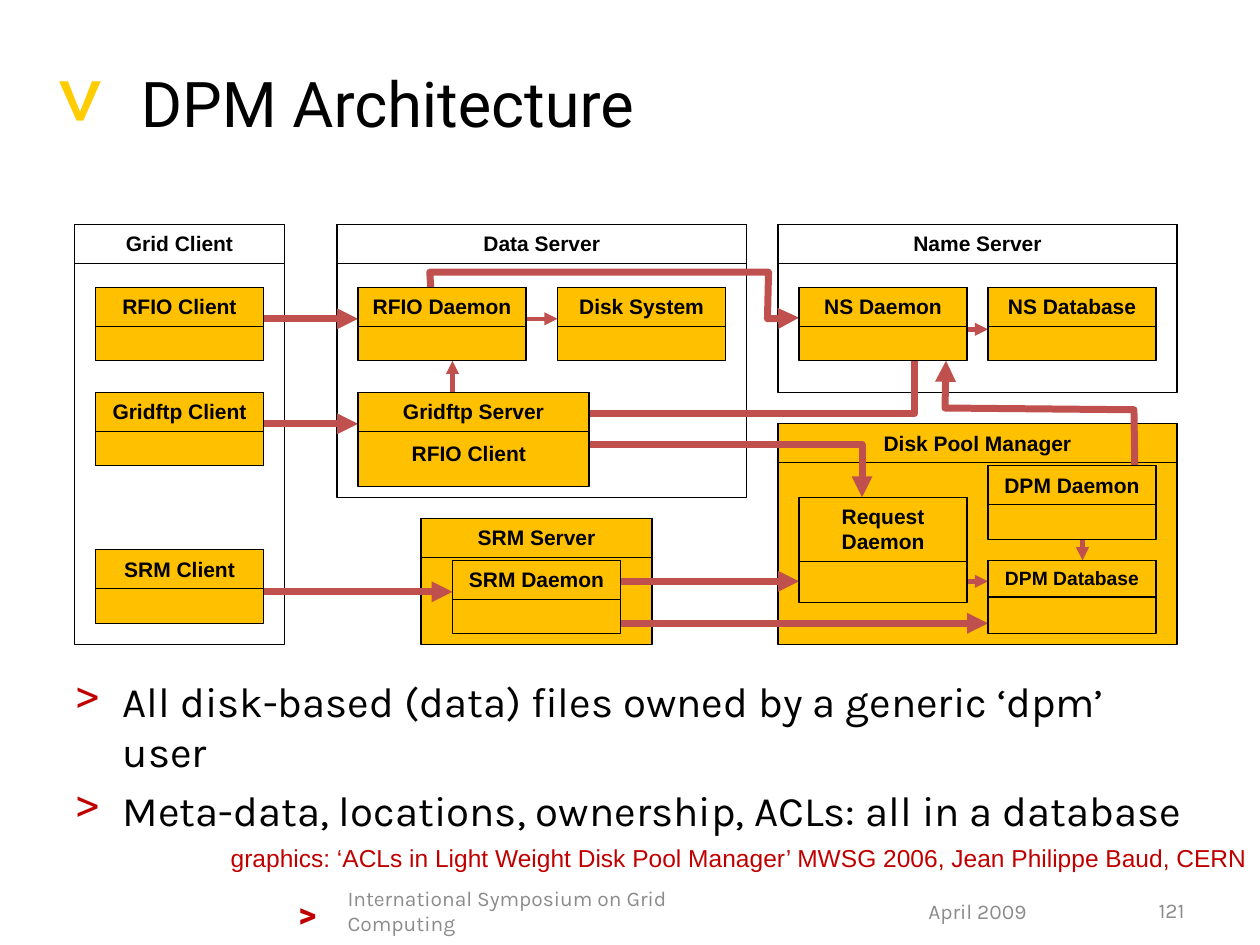
from dataclasses import dataclass

from lxml import etree
from pptx import Presentation
from pptx.dml.color import RGBColor
from pptx.enum.shapes import MSO_CONNECTOR, MSO_SHAPE
from pptx.enum.text import MSO_ANCHOR, PP_ALIGN
from pptx.oxml.ns import qn
from pptx.util import Pt

RECT = MSO_SHAPE.RECTANGLE
STRAIGHT = MSO_CONNECTOR.STRAIGHT
TOP, MIDDLE = MSO_ANCHOR.TOP, MSO_ANCHOR.MIDDLE
LEFT, CENTER, RIGHT = PP_ALIGN.LEFT, PP_ALIGN.CENTER, PP_ALIGN.RIGHT

BLACK = RGBColor(0x00, 0x00, 0x00)
GOLD = RGBColor(0xFF, 0xC0, 0x00)
YELLOW = RGBColor(0xFF, 0xCC, 0x00)
RED = RGBColor(0xC0, 0x00, 0x00)
BRICK = RGBColor(0xC0, 0x50, 0x4D)
GRAY = RGBColor(0x8C, 0x8C, 0x8C)

# Top left corner of the diagram; its parts are placed from here in points.
X0, Y0 = 42.6, 128.2
HEAD = 22.3
THIN, THICK = 2.5, 4


@dataclass
class Box:
    name: str
    x: float
    y: float
    w: float = 96
    h: float = 42
    fill: RGBColor | None = GOLD
    head: float = HEAD
    size: float = 12


@dataclass
class Flow:
    points: list[tuple[float, float]]
    width: float = THICK


@dataclass
class Label:
    text: str
    x: float
    y: float
    w: float
    h: float
    size: float
    font: str
    color: RGBColor
    align: PP_ALIGN = LEFT
    anchor: MSO_ANCHOR = TOP
    bold: bool = False
    turn: float = 0
    wrap: bool = True


FRAMES = [
    Box("Grid Client", 0, 0, 120, 240, None),
    Box("Data Server", 150, 0, 234, 156, None),
    Box("SRM Server", 198, 168, 132, 72),
    Box("Name Server", 402, 0, 228, 96, None),
    Box("Disk Pool Manager", 402, 114, 228, 126),
]

FLOWS = [
    Flow([(258, 54), (276, 54)], THIN),
    Flow([(216, 96), (216, 78)], THIN),
    Flow([(576, 180), (576, 192)], THIN),
    Flow([(510, 204), (522, 204)], THIN),
    Flow([(510, 60), (522, 60)], THIN),
    Flow([(108, 54), (162, 54)]),
    Flow([(108, 114), (162, 114)]),
    Flow([(108, 210), (216, 210)]),
    Flow([(312, 204), (414, 204)]),
    Flow([(312, 228), (522, 228)]),
    Flow([(294, 108), (480, 108), (480, 66)]),
    Flow([(606, 150), (605.4, 106), (497.4, 105), (498, 78)]),
    Flow([(203.6, 36), (203, 27.4), (396.6, 27.4), (396, 54), (414, 53.4)]),
    Flow([(294, 126), (450, 126), (450, 156)]),
]

NODES = [
    Box("RFIO Client", 12, 36),
    Box("Gridftp Client", 12, 96),
    Box("SRM Client", 12, 186),
    Box("RFIO Daemon", 162, 36),
    Box("Disk System", 276, 36),
    Box("Gridftp Server", 162, 96, 132, 54),
    Box("SRM Daemon", 216, 192),
    Box("NS Daemon", 414, 36),
    Box("NS Database", 522, 36),
    Box("Request Daemon", 414, 156, 96, 60, head=36.7),
    Box("DPM Daemon", 522, 138),
    Box("DPM Database", 522, 192, head=21, size=11),
]

LABELS = [
    Label(">", 163.4, 506.2, 33.8, 31.7, 20, "Roboto", RED, bold=True),
    Label(">", 33.1, 16.6, 33.8, 72.7, 54, "Roboto", YELLOW, turn=90),
    Label("DPM Architecture", 73.4, 27.4, 610.6, 62.6, 36, "Roboto", BLACK,
          anchor=MIDDLE),
    Label("RFIO Client", 228.2, 248.4, 79.9, 21.6, 12, "Arial", BLACK,
          bold=True, wrap=False),
    Label("graphics: ‘ACLs in Light Weight Disk Pool Manager’ MWSG 2006, "
          "Jean Philippe Baud, CERN", 39.6, 478, 680.4, 24.5, 14, "Arial",
          RED, RIGHT),
    Label("121", 646.6, 511.9, 37.4, 16.6, 12, "Karla", GRAY, RIGHT, MIDDLE),
    Label("April 2009", 523.4, 511.9, 84.2, 17.3, 12, "Karla", GRAY,
          anchor=MIDDLE),
    Label("International Symposium on Grid Computing", 191.5, 511.9, 258.5,
          17.3, 12, "Karla", GRAY, anchor=MIDDLE),
]

BULLETS = [
    "All disk-based (data) files owned by a generic ‘dpm’ user",
    "Meta-data, locations, ownership, ACLs: all in a database",
]


def add_run(para, text: str, size: float, font: str, color: RGBColor,
            bold: bool = False) -> None:
    run = para.add_run()
    run.text = text
    run.font.size = Pt(size)
    run.font.name = font
    run.font.color.rgb = color
    run.font.bold = bold


def add_rect(slide, box: Box, height: float):
    rect = slide.shapes.add_shape(RECT, Pt(X0 + box.x), Pt(Y0 + box.y),
                                  Pt(box.w), Pt(height))
    rect.shadow.inherit = False
    if box.fill is None:
        rect.fill.background()
    else:
        rect.fill.solid()
        rect.fill.fore_color.rgb = box.fill
    rect.line.color.rgb = BLACK
    rect.line.width = Pt(0.75)
    return rect


def draw_box(slide, box: Box) -> None:
    """Draw the body, then the header strip with the name."""
    add_rect(slide, box, box.h)
    frame = add_rect(slide, box, box.head).text_frame
    frame.word_wrap = True
    frame.vertical_anchor = TOP
    para = frame.paragraphs[0]
    para.alignment = CENTER
    add_run(para, box.name, box.size, "Arial", BLACK, True)


def draw_flow(slide, flow: Flow) -> None:
    """Draw an arrow: a connector if straight, else an open outline."""
    points = [(Pt(X0 + x), Pt(Y0 + y)) for x, y in flow.points]
    if len(points) == 2:
        shape = slide.shapes.add_connector(STRAIGHT, *points[0], *points[1])
    else:
        path = slide.shapes.build_freeform(*points[0])
        path.add_line_segments(points[1:], close=False)
        shape = path.convert_to_shape()
        shape.fill.background()
    shape.line.color.rgb = BRICK
    shape.line.width = Pt(flow.width)
    line = shape.line._get_or_add_ln()
    etree.SubElement(line, qn("a:round"))
    etree.SubElement(line, qn("a:tailEnd"), type="triangle")
    etree.SubElement(shape._element.spPr, qn("a:effectLst"))


def draw_label(slide, label: Label) -> None:
    box = slide.shapes.add_textbox(Pt(label.x), Pt(label.y),
                                   Pt(label.w), Pt(label.h))
    box.rotation = label.turn
    frame = box.text_frame
    frame.word_wrap = label.wrap
    frame.vertical_anchor = label.anchor
    para = frame.paragraphs[0]
    para.alignment = label.align
    add_run(para, label.text, label.size, label.font, label.color, label.bold)


def draw_list(slide, items: list[str]) -> None:
    frame = slide.shapes.add_textbox(Pt(36), Pt(382.3), Pt(648),
                                     Pt(100)).text_frame
    frame.word_wrap = True
    for i, item in enumerate(items):
        para = frame.add_paragraph() if i else frame.paragraphs[0]
        props = para._p.get_or_add_pPr()
        props.set("marL", str(Pt(27)))
        props.set("indent", str(-Pt(27)))
        tint = etree.SubElement(props, qn("a:buClr"))
        etree.SubElement(tint, qn("a:srgbClr"), val=str(RED))
        etree.SubElement(props, qn("a:buChar"), char=">")
        if i:
            para.space_before = Pt(4.8)
        add_run(para, item, 24, "Karla", BLACK)


def main() -> None:
    deck = Presentation()
    deck.slide_width, deck.slide_height = Pt(720), Pt(540)
    slide = deck.slides.add_slide(deck.slide_layouts[6])
    for frame in FRAMES:
        draw_box(slide, frame)
    for flow in FLOWS:
        draw_flow(slide, flow)
    for node in NODES:
        draw_box(slide, node)
    for label in LABELS:
        draw_label(slide, label)
    draw_list(slide, BULLETS)
    deck.save("out.pptx")


if __name__ == "__main__":
    main()
